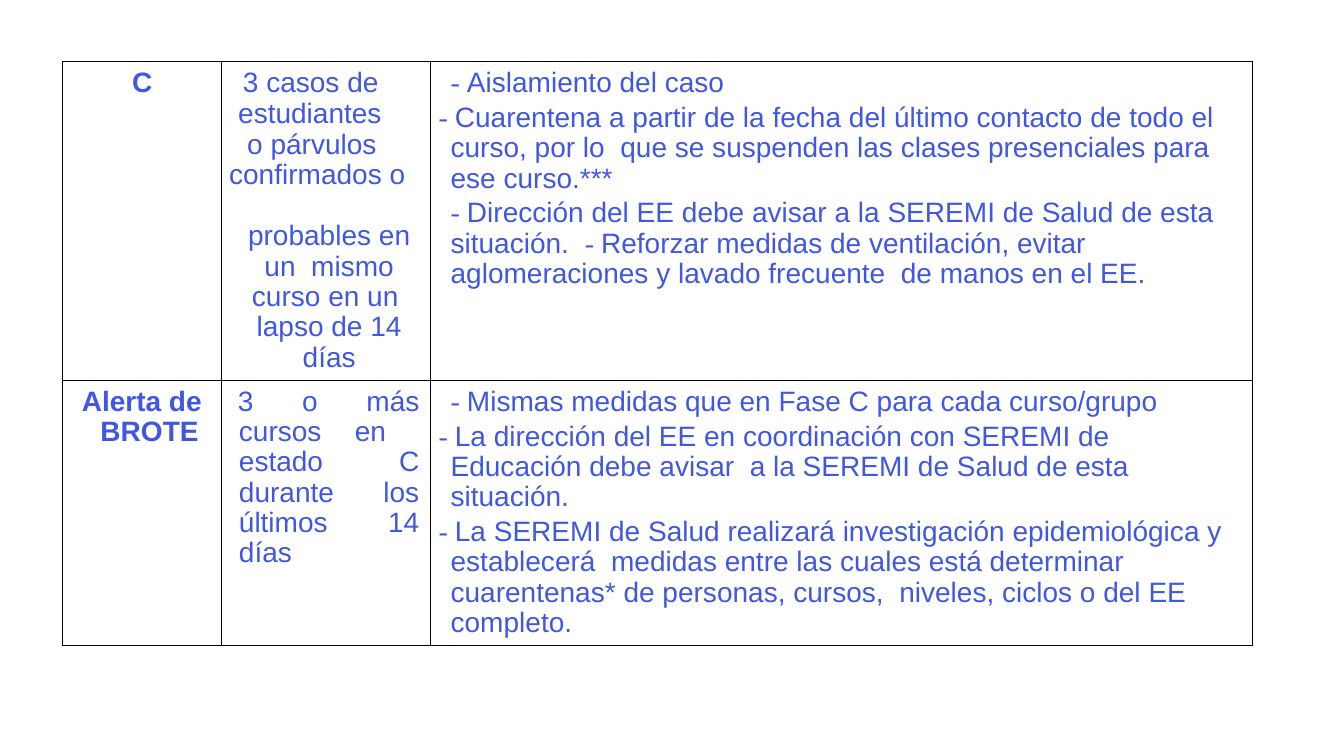
from lxml import etree
from pptx import Presentation
from pptx.dml.color import RGBColor
from pptx.enum.text import MSO_ANCHOR, PP_ALIGN
from pptx.oxml.ns import qn
from pptx.util import Inches, Pt

LEFT, CENTER = PP_ALIGN.LEFT, PP_ALIGN.CENTER
RIGHT, JUSTIFY = PP_ALIGN.RIGHT, PP_ALIGN.JUSTIFY
TEXT_BLUE = RGBColor(0x40, 0x57, 0xE3)
BORDER_BLACK = RGBColor(0x00, 0x00, 0x00)
TEXT_FONT, DASH_FONT = "Arial", "Times New Roman"
DASH = "- "
TABLE_LEFT, TABLE_TOP = 0.62, 0.61
COLUMN_WIDTHS = (1.58, 2.07, 8.15)
ROW_HEIGHTS = (2.57, 2.26)
CELL_MARGIN = 0.07

# Paragraph formats; lengths in inches, space before in points
PHASE = dict(align=CENTER, bold=True)
ALERT = dict(align=CENTER, bold=True, left=0.1, right=0.03)
CASES = dict(align=RIGHT, before=0.3)
FIRST_MEASURE = dict(left=0.13)
INLINE_MEASURE = dict(left=0.13, before=3.1)
HANGING_MEASURE = dict(left=0.13, indent=-0.12, before=3.1)

ROWS = [
    [
        [("C", PHASE)],
        [
            ("3 casos de  ", dict(align=RIGHT, right=0.29)),
            ("estudiantes  ", dict(CASES, right=0.26)),
            ("o párvulos  ", dict(CASES, right=0.31)),
            ("confirmados o  ", dict(CASES, right=0.18)),
            ("probables en un  mismo curso en un  lapso de 14 días",
             dict(align=CENTER, left=0.1, right=0.04, before=0.3)),
        ],
        [
            ("- Aislamiento del caso ", FIRST_MEASURE),
            ("- Cuarentena a partir de la fecha del último contacto de todo el curso, "
             "por lo  que se suspenden las clases presenciales para ese curso.*** ",
             HANGING_MEASURE),
            ("- Dirección del EE debe avisar a la SEREMI de Salud de esta situación.  "
             "- Reforzar medidas de ventilación, evitar aglomeraciones y lavado "
             "frecuente  de manos en el EE.", INLINE_MEASURE),
        ],
    ],
    [
        [("Alerta de ", ALERT), (" BROTE", ALERT)],
        [("3 o más cursos en  estado C durante  los últimos 14 días",
          dict(align=JUSTIFY, left=0.1, right=0.04, indent=-0.01))],
        [
            ("- Mismas medidas que en Fase C para cada curso/grupo ", FIRST_MEASURE),
            ("- La dirección del EE en coordinación con SEREMI de Educación debe "
             "avisar  a la SEREMI de Salud de esta situación.  ", HANGING_MEASURE),
            ("- La SEREMI de Salud realizará investigación epidemiológica y "
             "establecerá  medidas entre las cuales está determinar cuarentenas* de "
             "personas, cursos,  niveles, ciclos o del EE completo.", HANGING_MEASURE),
        ],
    ],
]


def add_run(paragraph, text, font_name, bold):
    run = paragraph.add_run()
    run.text = text
    run.font.name = font_name
    run.font.size = Pt(20)
    run.font.bold = bold
    run.font.color.rgb = TEXT_BLUE


def write_paragraph(paragraph, text, align=LEFT, bold=False, left=0, right=0,
                    indent=0, before=0):
    """Format a paragraph and set its dashes in their own font."""
    paragraph.alignment = align
    paragraph.line_spacing = 0.97
    paragraph.space_before = Pt(before)
    properties = paragraph._p.get_or_add_pPr()
    for name, length in (("marL", left), ("marR", right), ("indent", indent)):
        properties.set(name, str(Inches(length)))
    for index, piece in enumerate(text.split(DASH)):
        if index:
            add_run(paragraph, DASH, DASH_FONT, bold)
        if piece:
            add_run(paragraph, piece, TEXT_FONT, bold)


def add_borders(cell):
    properties = cell._tc.get_or_add_tcPr()
    for position, side in enumerate(("lnL", "lnR", "lnT", "lnB")):
        line = etree.Element(qn(f"a:{side}"), w=str(Pt(1)))
        fill = etree.SubElement(line, qn("a:solidFill"))
        etree.SubElement(fill, qn("a:srgbClr"), val=str(BORDER_BLACK))
        properties.insert(position, line)


def fill_cell(cell, paragraphs):
    cell.fill.background()
    cell.vertical_anchor = MSO_ANCHOR.TOP
    cell.margin_left = cell.margin_right = Inches(CELL_MARGIN)
    cell.margin_top = cell.margin_bottom = Inches(CELL_MARGIN)
    add_borders(cell)
    frame = cell.text_frame
    for index, (text, style) in enumerate(paragraphs):
        paragraph = frame.add_paragraph() if index else frame.paragraphs[0]
        write_paragraph(paragraph, text, **style)


def main():
    presentation = Presentation()
    presentation.slide_width = Inches(13.33)
    presentation.slide_height = Inches(7.5)
    slide = presentation.slides.add_slide(presentation.slide_layouts[6])
    table = slide.shapes.add_table(
        len(ROW_HEIGHTS), len(COLUMN_WIDTHS), Inches(TABLE_LEFT), Inches(TABLE_TOP),
        Inches(sum(COLUMN_WIDTHS)), Inches(sum(ROW_HEIGHTS))).table
    table.first_row = table.horz_banding = False
    for column, width in zip(table.columns, COLUMN_WIDTHS):
        column.width = Inches(width)
    for row, height, contents in zip(table.rows, ROW_HEIGHTS, ROWS):
        row.height = Inches(height)
        for cell, paragraphs in zip(row.cells, contents):
            fill_cell(cell, paragraphs)
    presentation.save("out.pptx")


if __name__ == "__main__":
    main()
